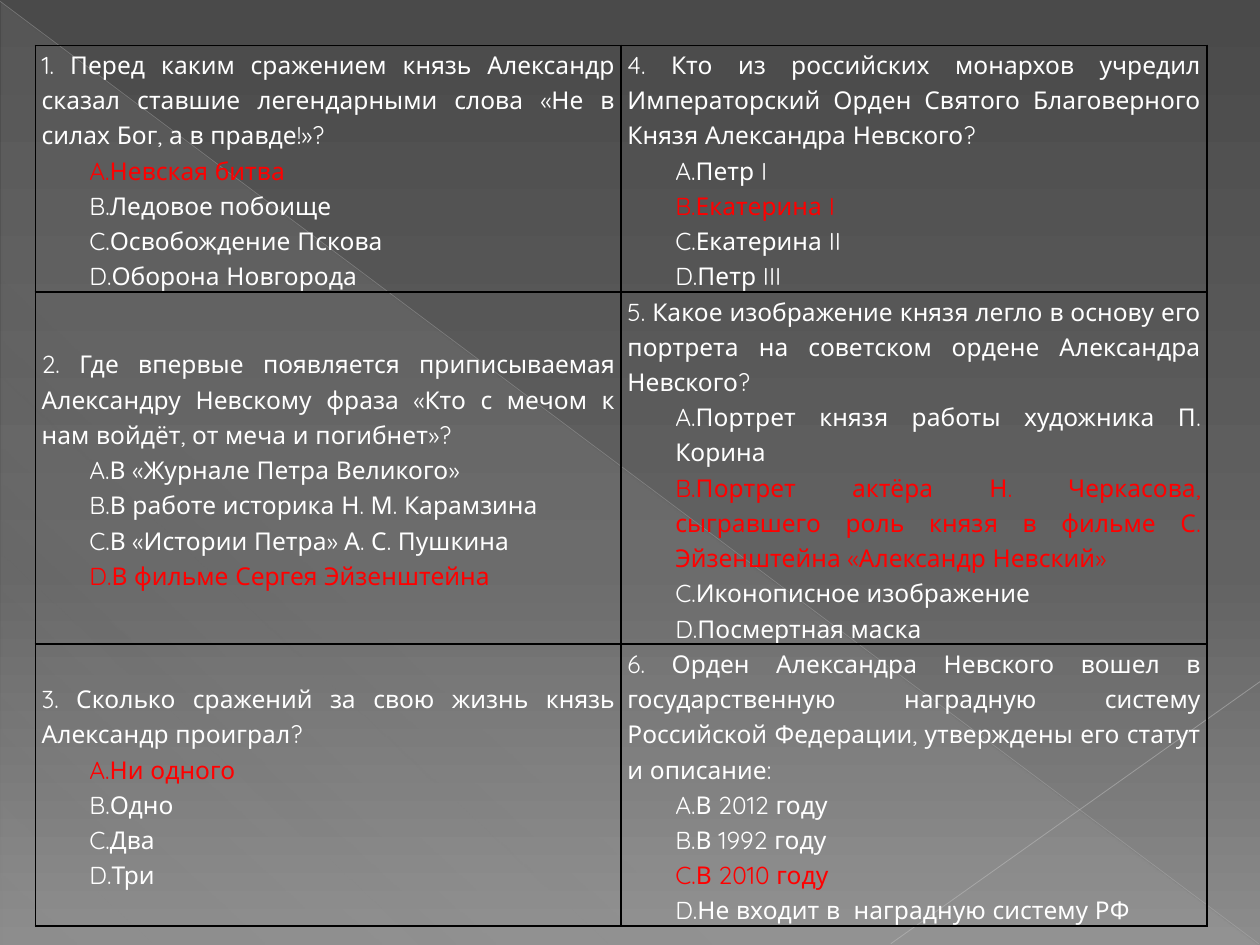
from dataclasses import dataclass

from lxml.etree import SubElement
from pptx import Presentation
from pptx.dml.color import RGBColor
from pptx.enum.shapes import MSO_CONNECTOR, MSO_SHAPE
from pptx.enum.text import MSO_ANCHOR, PP_ALIGN
from pptx.oxml.ns import qn
from pptx.util import Inches, Pt

FONT = "Quicksand"
WHITE, RED, BLACK = "FFFFFF", "FF0000", "000000"
ROW_HEIGHTS = (1.72, 2.58, 1.93)
COLUMN_WIDTH = 4.65


@dataclass
class Question:
    text: str
    answers: tuple[str, ...]
    correct: int


@dataclass
class Ray:
    start: tuple[float, float]
    end: tuple[float, float]
    color: str
    width: float
    opacity: int


# Questions run down the left column, then down the right one
QUESTIONS = [
    Question("1. Перед каким сражением князь Александр сказал ставшие легендарными слова "
             "«Не в силах Бог, а в правде!»?",
             ("Невская битва", "Ледовое побоище", "Освобождение Пскова", "Оборона Новгорода"), 0),
    Question("2. Где впервые появляется приписываемая Александру Невскому фраза "
             "«Кто с мечом к нам войдёт, от меча и погибнет»?",
             ("В «Журнале Петра Великого»", "В работе историка Н. М. Карамзина",
              "В «Истории Петра» А. С. Пушкина", "В фильме Сергея Эйзенштейна"), 3),
    Question("3. Сколько сражений за свою жизнь князь Александр проиграл?",
             ("Ни одного", "Одно", "Два", "Три"), 0),
    Question("4. Кто из российских монархов учредил Императорский Орден Святого "
             "Благоверного Князя Александра Невского?",
             ("Петр I", "Екатерина I", "Екатерина II", "Петр III"), 1),
    Question("5. Какое изображение князя легло в основу его портрета на советском ордене "
             "Александра Невского?",
             ("Портрет князя работы художника П. Корина",
              "Портрет актёра Н. Черкасова, сыгравшего роль князя в фильме "
              "С. Эйзенштейна «Александр Невский»",
              "Иконописное изображение", "Посмертная маска"), 1),
    Question("6. Орден Александра Невского вошел в государственную наградную систему "
             "Российской Федерации, утверждены его статут и описание:",
             ("В 2012 году", "В 1992 году", "В 2010 году", "Не входит в  наградную систему РФ"), 2),
]

RAYS = [
    Ray((0, 0.01), (9.99, 7.49), "BFBFBF", 0.39, 35),
    Ray((10, 5.41), (7.07, 7.49), "C6C6C6", 0.47, 45),
]


def rgb(color: str) -> RGBColor:
    return RGBColor.from_string(color)


def add_color(parent, color: str, opacity: int = 100) -> None:
    element = SubElement(parent, qn("a:srgbClr"), val=color)
    if opacity < 100:
        SubElement(element, qn("a:alpha"), val=str(opacity * 1000))


def set_gradient(owner, fill, stops: list[tuple], angle: int) -> None:
    """Fill with stops of (position, color, opacity), angle clockwise."""
    fill.gradient()
    gradient = owner.element.find(".//" + qn("a:gradFill"))
    gradient.clear()
    gradient.set("rotWithShape", "1")
    stop_list = SubElement(gradient, qn("a:gsLst"))
    for position, color, opacity in stops:
        stop = SubElement(stop_list, qn("a:gs"), pos=str(position * 1000))
        add_color(stop, color, opacity)
    SubElement(gradient, qn("a:lin"), ang=str(angle * 60000), scaled="0")


def add_ray(page, ray: Ray) -> None:
    points = [Inches(value) for value in ray.start + ray.end]
    line = page.shapes.add_connector(MSO_CONNECTOR.STRAIGHT, *points)
    line.line.width = Pt(ray.width)
    line.line.color.rgb = rgb(ray.color)
    color = line.element.spPr.find(".//" + qn("a:srgbClr"))
    SubElement(color, qn("a:alpha"), val=str(ray.opacity * 1000))
    SubElement(line.element.spPr, qn("a:effectLst"))


def write(para, text: str, *, color: str = WHITE, lettered: bool = False) -> None:
    para.alignment = PP_ALIGN.JUSTIFY
    para.line_spacing = 1.15
    span = para.add_run()
    span.text = text
    span.font.name = FONT
    span.font.size = Pt(14)
    span.font.color.rgb = rgb(color)
    if lettered:
        properties = para._p.get_or_add_pPr()
        properties.set("marL", str(Inches(0.38)))
        properties.set("indent", "0")
        SubElement(properties, qn("a:buAutoNum"), type="alphaUcPeriod")


def format_cell(cell) -> None:
    cell.vertical_anchor = MSO_ANCHOR.MIDDLE
    cell.margin_left = cell.margin_right = Inches(0.05)
    cell.margin_top = cell.margin_bottom = 0
    properties = cell._tc.get_or_add_tcPr()
    for side in ("lnL", "lnR", "lnT", "lnB"):
        border = SubElement(properties, qn(f"a:{side}"), w=str(Pt(1)))
        add_color(SubElement(border, qn("a:solidFill")), BLACK)
    cell.fill.background()


def fill_cell(cell, question: Question) -> None:
    format_cell(cell)
    frame = cell.text_frame
    write(frame.paragraphs[0], question.text)
    for number, answer in enumerate(question.answers):
        color = RED if number == question.correct else WHITE
        write(frame.add_paragraph(), answer, color=color, lettered=True)


def main() -> None:
    deck = Presentation()
    deck.slide_width, deck.slide_height = Inches(10), Inches(7.5)
    page = deck.slides.add_slide(deck.slide_layouts[6])

    # Background with a pale triangle and two rays
    set_gradient(page, page.background.fill,
                 [(0, "4A4A4A", 100), (60, "626262", 100), (100, "8C8C8C", 100)], 90)
    triangle = page.shapes.add_shape(MSO_SHAPE.RIGHT_TRIANGLE, Inches(0.01), Inches(0.02),
                                     Inches(9.98), Inches(7.48))
    triangle.shadow.inherit = False
    triangle.line.fill.background()
    set_gradient(triangle, triangle.fill,
                 [(0, "D2D2D2", 10), (70, "D2D2D2", 8), (100, "D2D2D2", 1)], 133)
    for ray in RAYS:
        add_ray(page, ray)

    # Quiz table
    rows = len(ROW_HEIGHTS)
    table = page.shapes.add_table(rows, 2, Inches(0.28), Inches(0.36),
                                  Inches(2 * COLUMN_WIDTH), Inches(sum(ROW_HEIGHTS))).table
    table.first_row = table.horz_banding = False
    for column in table.columns:
        column.width = Inches(COLUMN_WIDTH)
    for row, height in zip(table.rows, ROW_HEIGHTS):
        row.height = Inches(height)
    for index, question in enumerate(QUESTIONS):
        fill_cell(table.cell(index % rows, index // rows), question)

    deck.save("out.pptx")


if __name__ == "__main__":
    main()
